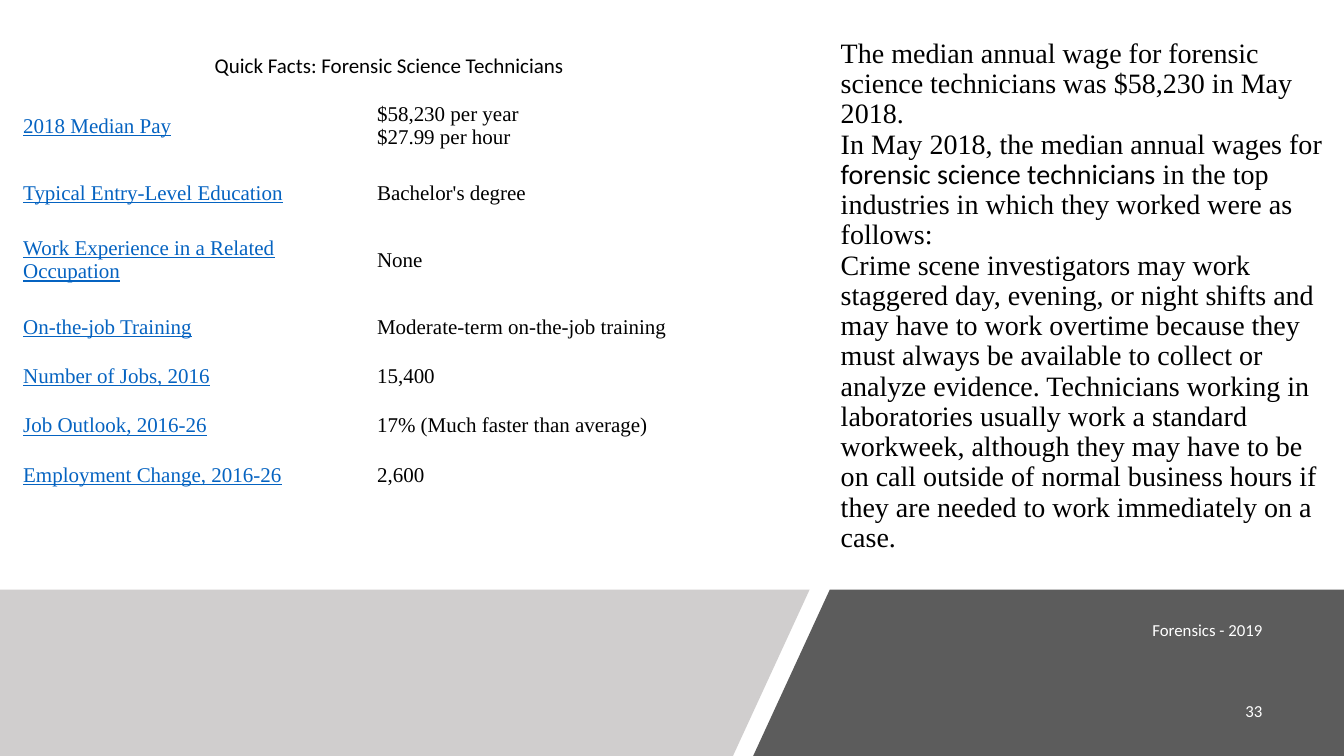
"""Build the forensic science technicians quick facts slide."""
from dataclasses import dataclass

from lxml import etree
from pptx import Presentation, util as u
from pptx.dml.color import RGBColor
from pptx.enum import text as t
from pptx.oxml import ns

COLORS = {"black": "000000", "white": "FFFFFF", "link": "0563C1",
          "dark": "404040", "light": "D0CECE"}
SERIF, SANS = "Times New Roman", "Calibri"


@dataclass
class Band:
    points: list[tuple[float, float]]
    color: str
    opacity: int = 100


@dataclass
class Box:
    left: float
    top: float
    width: float
    height: float


@dataclass
class Footer:
    text: str
    box: Box


@dataclass
class Fact:
    label: str
    value: str
    height: float = 0.49


BANDS = [
    Band([(8.23, 5.85), (13.33, 5.85), (13.33, 7.5), (7.47, 7.5)], "dark", 85),
    Band([(0, 5.85), (8.03, 5.85), (7.27, 7.5), (0, 7.5)], "light"),
]
FOOTERS = [
    Footer("Forensics - 2019", Box(8.24, 6.05, 4.38, 0.4)),
    Footer("33", Box(11.15, 6.85, 1.47, 0.4)),
]
TITLE = "Quick Facts: Forensic Science Technicians"
FACTS = [
    Fact("2018 Median Pay", "$58,230 per year \v$27.99 per hour", 0.84),
    Fact("Typical Entry-Level Education", "Bachelor's degree"),
    Fact("Work Experience in a Related Occupation", "None", 0.84),
    Fact("On-the-job Training", "Moderate-term on-the-job training"),
    Fact("Number of Jobs, 2016", "15,400"),
    Fact("Job Outlook, 2016-26", "17% (Much faster than average)"),
    Fact("Employment Change, 2016-26", "2,600"),
]
BODY = [
    [("The median annual wage for forensic science technicians was $58,230 "
      "in May 2018.", SERIF)],
    [("In May 2018, the median annual wages for ", SERIF),
     ("forensic science technicians", SANS),
     (" in the top industries in which they worked were as follows:", SERIF)],
    [("Crime scene investigators may work staggered day, evening, or night "
      "shifts and may have to work overtime because they must always be "
      "available to collect or analyze evidence. Technicians working in "
      "laboratories usually work a standard workweek, although they may have "
      "to be on call outside of normal business hours if they are needed to "
      "work immediately on a case.", SERIF)],
]


def rgb(name: str) -> RGBColor:
    return RGBColor.from_string(COLORS[name])


def style(font, name: str, size: float, color: str) -> None:
    font.name, font.size = name, u.Pt(size)
    font.color.rgb = rgb(color)


def draw_band(slide, band: Band) -> None:
    builder = slide.shapes.build_freeform(
        *(u.Inches(value) for value in band.points[0]), scale=1.0)
    builder.add_line_segments(
        [(u.Inches(x), u.Inches(y)) for x, y in band.points[1:]])
    shape = builder.convert_to_shape()
    shape.shadow.inherit = False
    shape.line.fill.background()
    shape.fill.solid()
    shape.fill.fore_color.rgb = rgb(band.color)
    if band.opacity < 100:
        color = shape.fill._xPr.find(".//" + ns.qn("a:srgbClr"))
        etree.SubElement(color, ns.qn("a:alpha"), val=str(band.opacity * 1000))


def add_frame(slide, box: Box, anchor: t.MSO_ANCHOR):
    lengths = (u.Inches(n) for n in (box.left, box.top, box.width, box.height))
    frame = slide.shapes.add_textbox(*lengths).text_frame
    frame.word_wrap = True
    frame.vertical_anchor = anchor
    return frame


def draw_footer(slide, footer: Footer) -> None:
    paragraph = add_frame(slide, footer.box, t.MSO_ANCHOR.MIDDLE).paragraphs[0]
    paragraph.text = footer.text
    paragraph.alignment = t.PP_ALIGN.RIGHT
    style(paragraph.font, SANS, 12, "white")


def draw_body(slide) -> None:
    frame = add_frame(slide, Box(8.24, 0.34, 5.09, 5.45), t.MSO_ANCHOR.TOP)
    for index, runs in enumerate(BODY):
        paragraph = frame.add_paragraph() if index else frame.paragraphs[0]
        paragraph.line_spacing = 0.9
        for words, font_name in runs:
            run = paragraph.add_run()
            run.text = words
            style(run.font, font_name, 20, "black")


def fill_cell(cell, words: str, font_name: str, color: str):
    cell.fill.background()
    cell.margin_left = cell.margin_right = u.Inches(0.04)
    cell.margin_top = cell.margin_bottom = u.Inches(0.04)
    cell.vertical_anchor = t.MSO_ANCHOR.MIDDLE
    paragraph = cell.text_frame.paragraphs[0]
    paragraph.text = words
    style(paragraph.font, font_name, 15, color)
    return paragraph


def draw_facts(slide) -> None:
    heights = [0.49] + [fact.height for fact in FACTS]
    table = slide.shapes.add_table(
        len(heights), 2, u.Inches(0.19), u.Inches(0.34),
        u.Inches(7.34), u.Inches(sum(heights))).table
    table.first_row = table.horz_banding = False
    table._tbl.tblPr.find(ns.qn("a:tableStyleId")).text = (
        "{2D5ABB26-0587-4C30-8999-92F81FD0307C}")
    for column, width in zip(table.columns, (3.51, 3.83)):
        column.width = u.Inches(width)
    for row, height in zip(table.rows, heights):
        row.height = u.Inches(height)
    title = table.cell(0, 0)
    title.merge(table.cell(0, 1))
    fill_cell(title, TITLE, SANS, "black").alignment = t.PP_ALIGN.CENTER
    title.vertical_anchor = t.MSO_ANCHOR.BOTTOM
    for index, fact in enumerate(FACTS, 1):
        label = fill_cell(table.cell(index, 0), fact.label, SERIF, "link")
        label.font.underline = True
        fill_cell(table.cell(index, 1), fact.value, SERIF, "black")


def main() -> None:
    presentation = Presentation()
    presentation.slide_width = u.Inches(13.33)
    presentation.slide_height = u.Inches(7.5)
    slide = presentation.slides.add_slide(presentation.slide_layouts[6])
    for band in BANDS:
        draw_band(slide, band)
    draw_body(slide)
    for footer in FOOTERS:
        draw_footer(slide, footer)
    draw_facts(slide)
    presentation.save("out.pptx")


if __name__ == "__main__":
    main()
